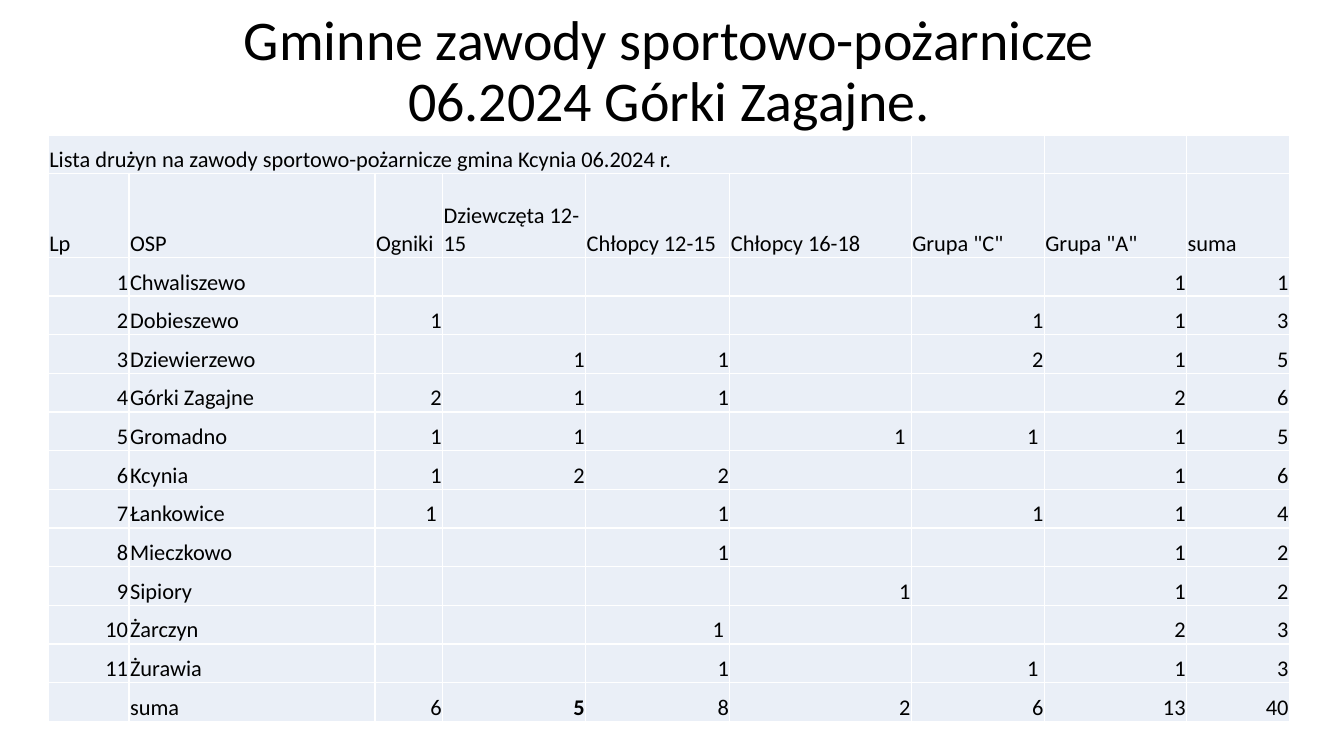
from pptx import Presentation
from pptx.dml.color import RGBColor
from pptx.enum.text import MSO_ANCHOR, PP_ALIGN
from pptx.util import Inches, Pt

BOTTOM, MIDDLE = MSO_ANCHOR.BOTTOM, MSO_ANCHOR.MIDDLE
LEFT, CENTER, RIGHT = PP_ALIGN.LEFT, PP_ALIGN.CENTER, PP_ALIGN.RIGHT
COLORS = {"text": "000000", "cell": "EAEFF7"}
FONT = "Calibri"

CAPTION = "Lista drużyn na zawody sportowo-pożarnicze gmina Kcynia 06.2024 r."
HEADINGS = ["Lp", "OSP", "Ogniki", "Dziewczęta 12-15", "Chłopcy 12-15",
            "Chłopcy 16-18", 'Grupa "C"', 'Grupa "A"', "suma"]
# Each brigade: name, six team counts, total
BRIGADES = [
    ["Chwaliszewo", "", "", "", "", "", 1, 1],
    ["Dobieszewo", 1, "", "", "", 1, 1, 3],
    ["Dziewierzewo", "", 1, 1, "", 2, 1, 5],
    ["Górki Zagajne", 2, 1, 1, "", "", 2, 6],
    ["Gromadno", 1, 1, "", 1, 1, 1, 5],
    ["Kcynia", 1, 2, 2, "", "", 1, 6],
    ["Łankowice", 1, "", 1, "", 1, 1, 4],
    ["Mieczkowo", "", "", 1, "", "", 1, 2],
    ["Sipiory", "", "", "", 1, "", 1, 2],
    ["Żarczyn", "", "", 1, "", "", 2, 3],
    ["Żurawia", "", "", 1, "", 1, 1, 3],
]
TOTALS = ["", "suma", 6, 5, 8, 2, 6, 13, 40]
# Counts set slightly in from the right edge: (brigade number, column)
INDENTED = {(5, 5), (5, 6), (7, 2), (10, 4), (11, 6)}
COLUMN_WIDTHS = [0.8, 2.44, 0.67, 1.42, 1.43, 1.8, 1.32, 1.41, 1.02]
TABLE_HEIGHT, HEADING_HEIGHT = 5.82, 0.83


def style_paragraph(para, size, align):
    para.alignment = align
    para.font.name = FONT
    para.font.size = Pt(size)
    para.font.color.rgb = RGBColor.from_string(COLORS["text"])


deck = Presentation()
deck.slide_width, deck.slide_height = Inches(13.33), Inches(7.5)
page = deck.slides.add_slide(deck.slide_layouts[5])

# Title
title = page.shapes.title
title.left, title.top = Inches(0.48), Inches(0)
title.width, title.height = Inches(12.31), Inches(1.45)
title.text_frame.vertical_anchor = MIDDLE
title_para = title.text_frame.paragraphs[0]
title_para.add_run().text = "Gminne zawody sportowo-pożarnicze"
title_para.add_line_break()
title_para.add_run().text = "06.2024 Górki Zagajne."
title_para.line_spacing = 0.9
style_paragraph(title_para, 40, CENTER)

# Table frame
rows = [[CAPTION] + [""] * 8, HEADINGS]
rows += [[number, *brigade] for number, brigade in enumerate(BRIGADES, 1)]
rows.append(TOTALS)
table = page.shapes.add_table(
    len(rows), len(HEADINGS), Inches(0.48), Inches(1.34),
    Inches(12.31), Inches(TABLE_HEIGHT)).table
table.first_row = False
table.horz_banding = False
for column, width in zip(table.columns, COLUMN_WIDTHS):
    column.width = Inches(width)
for row in table.rows:
    row.height = Inches((TABLE_HEIGHT - HEADING_HEIGHT) / (len(rows) - 1))
table.rows[1].height = Inches(HEADING_HEIGHT)
table.cell(0, 0).merge(table.cell(0, 5))

# Table cells: numbers to the right, words to the left
for row_index, values in enumerate(rows):
    for column_index, value in enumerate(values):
        cell = table.cell(row_index, column_index)
        cell.fill.solid()
        cell.fill.fore_color.rgb = RGBColor.from_string(COLORS["cell"])
        cell.vertical_anchor = BOTTOM
        indented = (row_index - 1, column_index) in INDENTED
        cell.margin_left = cell.margin_top = Inches(0.01)
        cell.margin_right = Inches(0.06 if indented else 0.01)
        cell.margin_bottom = Inches(0)
        para = cell.text_frame.paragraphs[0]
        if value != "":
            para.add_run().text = str(value)
        style_paragraph(para, 16, RIGHT if isinstance(value, int) else LEFT)

# Bold total for the girls' teams
table.cell(len(rows) - 1, 3).text_frame.paragraphs[0].font.bold = True

deck.save("out.pptx")
